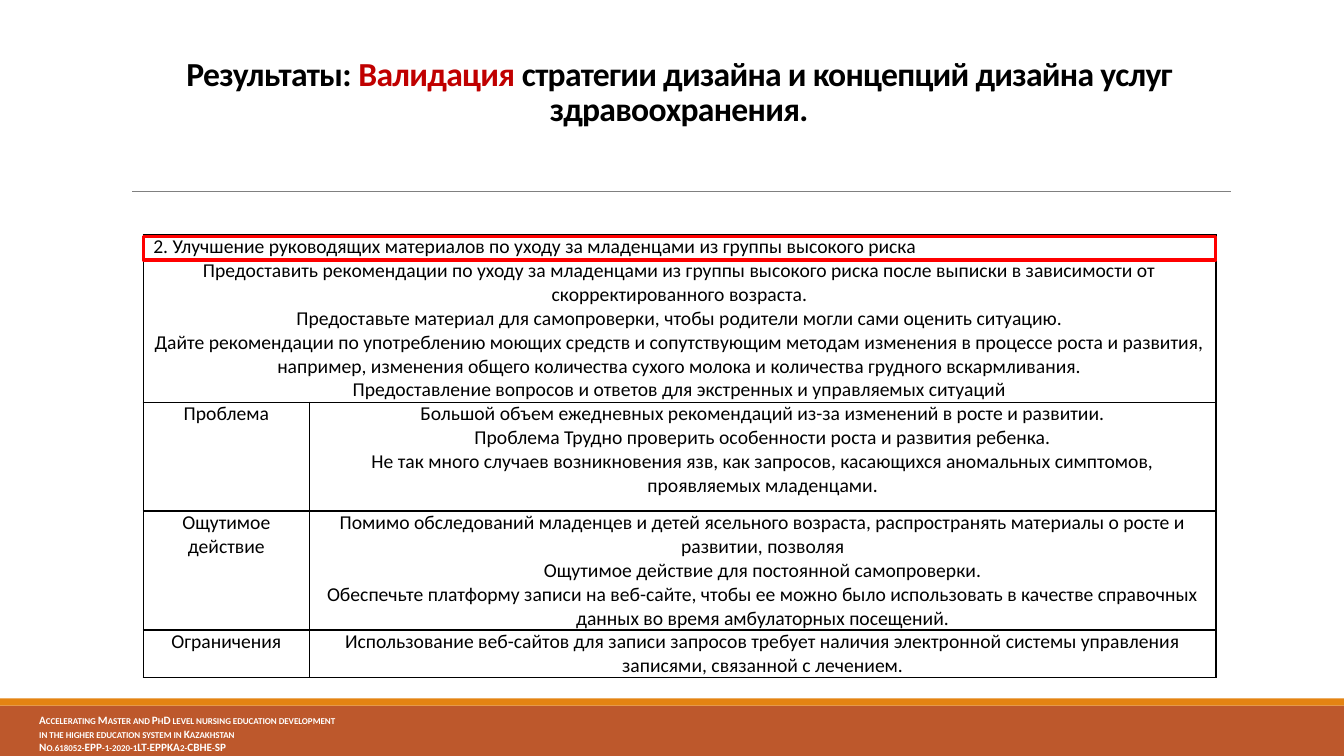
"""Builds the slide on validating the health service design strategy."""
from lxml.etree import SubElement
from pptx import Presentation
from pptx.dml.color import RGBColor as RGB
from pptx.enum.shapes import MSO_CONNECTOR as CONNECTOR, MSO_SHAPE as SHAPE
from pptx.enum.text import MSO_ANCHOR as ANCHOR, PP_ALIGN as ALIGN
from pptx.oxml.ns import qn
from pptx.util import Inches, Pt

THEME = {
    "font": "Calibri",
    "title": 24, "table": 14, "footer": 8,
    "black": RGB(0, 0, 0), "white": RGB(255, 255, 255),
    "accent": RGB(0xC0, 0, 0), "frame": RGB(255, 0, 0),
    "rule": RGB(0x80, 0x80, 0x80),
    "band": RGB(0xBD, 0x58, 0x2C), "stripe": RGB(0xE4, 0x83, 0x12),
}
WIDTH, HEIGHT = 13.33, 7.5
TABLE_LEFT, TABLE_TOP = 1.42, 2.33
COLUMNS = (1.65, 8.99)
ROWS = (0.24, 1.42, 1.08, 1.18, 0.47)

CONTENT = [
    ["2. Улучшение руководящих материалов по уходу за младенцами из группы высокого риска"],
    ["Предоставить рекомендации по уходу за младенцами из группы высокого риска после выписки "
     "в зависимости от скорректированного возраста.\n"
     "Предоставьте материал для самопроверки, чтобы родители могли сами оценить ситуацию.\n"
     "Дайте рекомендации по употреблению моющих средств и сопутствующим методам изменения "
     "в процессе роста и развития, например, изменения общего количества сухого молока "
     "и количества грудного вскармливания.\n"
     "Предоставление вопросов и ответов для экстренных и управляемых ситуаций"],
    ["Проблема",
     "Большой объем ежедневных рекомендаций из-за изменений в росте и развитии.\n"
     "Проблема Трудно проверить особенности роста и развития ребенка.\n"
     "Не так много случаев возникновения язв, как запросов, касающихся аномальных симптомов, "
     "проявляемых младенцами."],
    ["Ощутимое действие",
     "Помимо обследований младенцев и детей ясельного возраста, распространять материалы "
     "о росте и развитии, позволяя\n"
     "Ощутимое действие для постоянной самопроверки.\n"
     "Обеспечьте платформу записи на веб-сайте, чтобы ее можно было использовать в качестве "
     "справочных данных во время амбулаторных посещений."],
    ["Ограничения",
     "Использование веб-сайтов для записи запросов требует наличия электронной системы "
     "управления записями, связанной с лечением."],
]
FOOTER = ("Accelerating Master and PhD level nursing education development\n"
          "in the higher education system in Kazakhstan\n"
          "No.618052-EPP-1-2020-1LT-EPPKA2-CBHE-SP")


def set_font(paragraph, size, color, bold=False):
    font = paragraph.font
    font.name, font.size, font.bold = THEME["font"], Pt(THEME[size]), bold
    font.color.rgb = THEME[color]


def add_box(left, top, width, height):
    box = slide.shapes.add_shape(
        SHAPE.RECTANGLE, Inches(left), Inches(top), Inches(width), Inches(height))
    box.shadow.inherit = False
    return box


deck = Presentation()
deck.slide_width, deck.slide_height = Inches(WIDTH), Inches(HEIGHT)
slide = deck.slides.add_slide(deck.slide_layouts[5])

for color, top, height in (("band", 7, 0.5), ("stripe", 6.93, 0.07)):
    strip = add_box(0, top, WIDTH, height)
    strip.fill.solid()
    strip.fill.fore_color.rgb = THEME[color]
    strip.line.fill.background()

rule = slide.shapes.add_connector(
    CONNECTOR.STRAIGHT, Inches(1.31), Inches(1.9), Inches(12.21), Inches(1.9))
rule.line.color.rgb, rule.line.width = THEME["rule"], Pt(0.5)
SubElement(rule._element.spPr, qn("a:effectLst"))

footer = slide.shapes.add_textbox(Inches(0.29), Inches(7.03), Inches(4.59), Inches(0.47))
footer.text_frame.word_wrap = True
footer.text_frame.text = FOOTER
for line in footer.text_frame.paragraphs:
    set_font(line, "footer", "white", bold=True)
    line.runs[0]._r.get_or_add_rPr().set("cap", "small")

title = slide.shapes.title
title.left, title.top = Inches(0.57), Inches(0.21)
title.width, title.height = Inches(12.33), Inches(1.11)
title.text_frame.word_wrap = True
title.text_frame.vertical_anchor = ANCHOR.BOTTOM
heading = title.text_frame.paragraphs[0]
heading.alignment, heading.line_spacing = ALIGN.CENTER, 0.85
set_font(heading, "title", "black", bold=True)
for words, color in (
        ("Результаты: ", "black"), ("Валидация", "accent"),
        (" стратегии дизайна и концепций дизайна услуг здравоохранения.", "black")):
    run = heading.add_run()
    run.text = words
    run.font.color.rgb = THEME[color]
    run._r.get_or_add_rPr().set("spc", "-50")

table = slide.shapes.add_table(
    len(ROWS), len(COLUMNS), Inches(TABLE_LEFT), Inches(TABLE_TOP),
    Inches(sum(COLUMNS)), Inches(sum(ROWS))).table
table.first_row = table.horz_banding = False
for column, width in zip(table.columns, COLUMNS):
    column.width = Inches(width)
for row, height in zip(table.rows, ROWS):
    row.height = Inches(height)

for cell in table.iter_cells():
    cell.margin_left = cell.margin_right = Inches(0.06)
    cell.margin_top = cell.margin_bottom = 0
    properties = cell._tc.get_or_add_tcPr()
    for side in ("a:lnL", "a:lnR", "a:lnT", "a:lnB"):
        border = SubElement(properties, qn(side), w=str(Pt(1)))
        paint = SubElement(border, qn("a:solidFill"))
        SubElement(paint, qn("a:srgbClr"), val=str(THEME["black"]))
    cell.fill.solid()
    cell.fill.fore_color.rgb = THEME["white"]

for row_index, texts in enumerate(CONTENT):
    if len(texts) == 1:
        table.cell(row_index, 0).merge(table.cell(row_index, 1))
    for column_index, text in enumerate(texts):
        cell = table.cell(row_index, column_index)
        cell.text = text
        for paragraph in cell.text_frame.paragraphs:
            paragraph.alignment = ALIGN.CENTER if row_index else ALIGN.LEFT
            set_font(paragraph, "table", "black")
table.cell(0, 0).margin_left = Inches(0.1)

highlight = add_box(TABLE_LEFT, 2.35, sum(COLUMNS), 0.23)
highlight.fill.background()
highlight.line.color.rgb, highlight.line.width = THEME["frame"], Pt(2.25)

deck.save("out.pptx")
